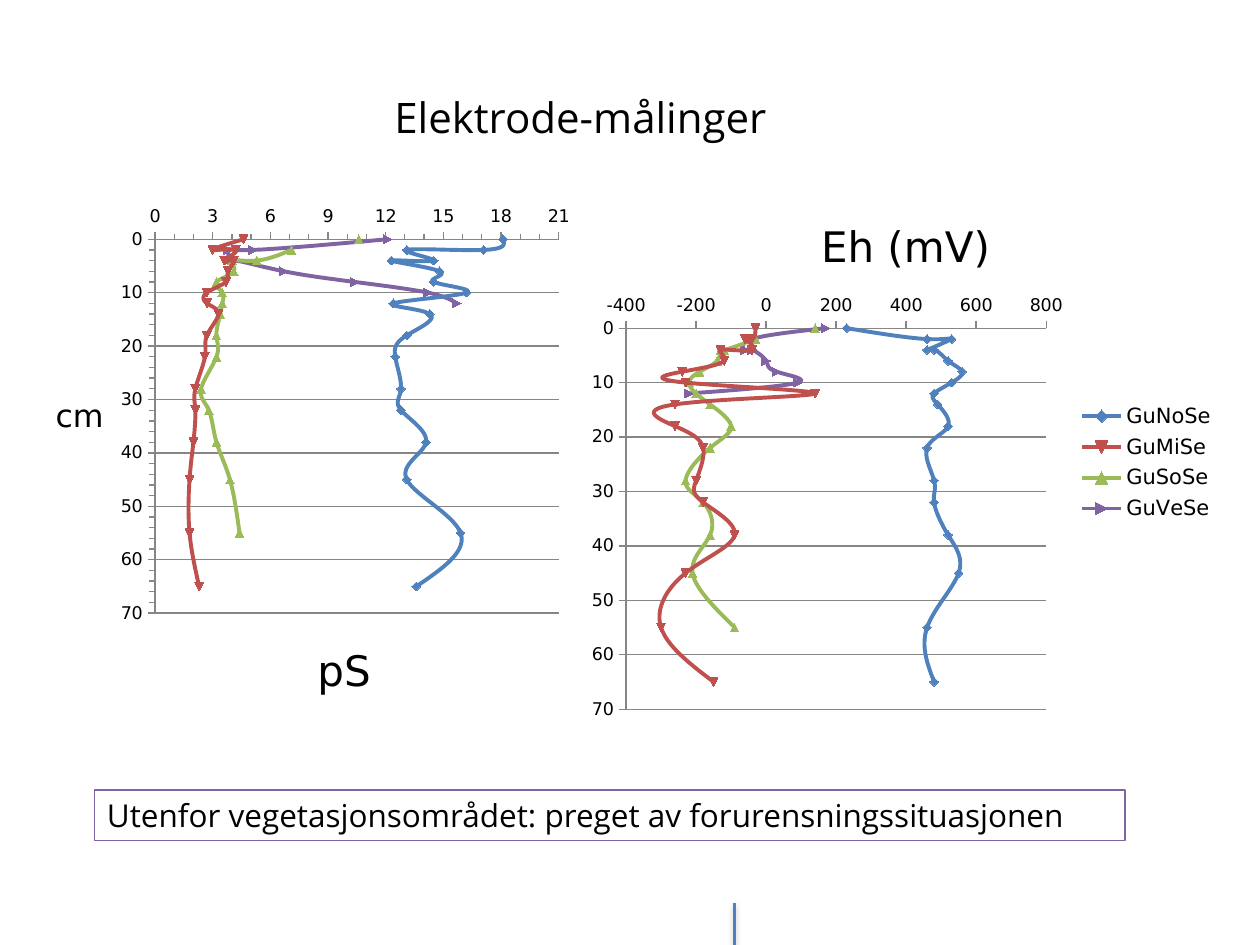
from lxml import etree
from pptx import Presentation
from pptx.chart.data import XyChartData
from pptx.dml.color import RGBColor
from pptx.enum.chart import (XL_AXIS_CROSSES, XL_CHART_TYPE, XL_LEGEND_POSITION,
                             XL_TICK_LABEL_POSITION, XL_TICK_MARK)
from pptx.enum.shapes import MSO_CONNECTOR, MSO_SHAPE
from pptx.enum.text import MSO_ANCHOR, PP_ALIGN
from pptx.oxml import parse_xml
from pptx.oxml.ns import nsdecls, qn
from pptx.util import Inches, Pt

SCATTER = XL_CHART_TYPE.XY_SCATTER_SMOOTH
MINIMUM = XL_AXIS_CROSSES.MINIMUM
LEGEND_RIGHT = XL_LEGEND_POSITION.RIGHT
NEXT_TO_AXIS = XL_TICK_LABEL_POSITION.NEXT_TO_AXIS
TICK_OUT, TICK_NONE = XL_TICK_MARK.OUTSIDE, XL_TICK_MARK.NONE
STRAIGHT, RECTANGLE = MSO_CONNECTOR.STRAIGHT, MSO_SHAPE.RECTANGLE
LEFT, MIDDLE = PP_ALIGN.LEFT, MSO_ANCHOR.MIDDLE

TEXT_FONT, CHART_FONT = "Open Sans", "DejaVu Sans"
COLORS = {
    "text": "000000",
    "axis": "868686",
    "blue": "4F81BD",
    "red": "C0504D",
    "green": "9BBB59",
    "purple": "8064A2",
}
SERIES_COLORS = ["blue", "red", "green", "purple"]

# Sampling depths in cm, shared by all cores; None marks a missing reading
DEPTHS = [0, 2, 2, 4, 4, 6, 8, 10, 12, 14, 18, 22, 28, 32, 38, 45, 55, 65]
SULPHIDE = {
    "Series 1": [18.1, 17.1, 13.1, 14.5, 12.3, 14.8, 14.5, 16.2, 12.4, 14.3,
                 13.1, 12.5, 12.8, 12.8, 14.1, 13.1, 15.9, 13.6],
    "Series 2": [4.6, 3, 4.2, 3.6, 4.1, 3.8, 3.7, 2.7, 2.7, 3.3,
                 2.7, 2.6, 2.1, 2.1, 2, 1.8, 1.8, 2.3],
    "Series 3": [10.6, None, 7.1, 5.3, 4, 4.1, 3.2, 3.5, 3.5, 3.4,
                 3.2, 3.2, 2.4, 2.8, 3.2, 3.9, 4.4, None],
    "Series 4": [12.1, 5.1, 3.8, 3.8, 4.2, 6.7, 10.4, 14.2, 15.7] + [None] * 9,
}
REDOX = {
    "GuNoSe": [230, 460, 530, 460, 480, 520, 560, 530, 480, 490,
               520, 460, 480, 480, 520, 550, 460, 480],
    "GuMiSe": [-30, -40, -60, -40, -130, -120, -240, -230, 140, -260,
               -260, -180, -200, -180, -90, -230, -300, -150],
    "GuSoSe": [140, None, -30, -120, -130, -140, -190, -220, -200, -160,
               -100, -160, -230, -180, -160, -210, -90, None],
    "GuVeSe": [170, -40, -40, -60, -40, 0, 30, 90, -220] + [None] * 9,
}


def rgb(name):
    return RGBColor.from_string(COLORS[name])


def style_font(font, size, name):
    font.size = Pt(size)
    font.name = name
    font.bold = False
    font.color.rgb = rgb("text")


def write_text(shape, text, size):
    frame = shape.text_frame
    frame.text = text
    frame.word_wrap = True
    frame.vertical_anchor = MIDDLE
    paragraph = frame.paragraphs[0]
    paragraph.alignment = LEFT
    style_font(paragraph.runs[0].font, size, TEXT_FONT)


def place(element, x, y, width=None, height=None, inner=False):
    """Give a chart part a manual layout, in fractions of the chart."""
    for old in element.findall(qn("c:layout")):
        element.remove(old)
    layout = etree.Element(qn("c:layout"))
    manual = etree.SubElement(layout, qn("c:manualLayout"))
    values = {"xMode": "edge", "yMode": "edge", "x": x, "y": y, "w": width, "h": height}
    if inner:
        values = {"layoutTarget": "inner", **values}
    for tag, value in values.items():
        if value is not None:
            etree.SubElement(manual, qn(f"c:{tag}")).set("val", str(value))
    before = [child for child in element
              if child.tag in (qn("c:tx"), qn("c:legendPos"))]
    element.insert(len(before), layout)


def add_title(owner, text, size, x, y):
    """Title a chart or an axis with horizontal text."""
    title = owner.axis_title if hasattr(owner, "axis_title") else owner.chart_title
    frame = title.text_frame
    frame.text = text
    style_font(frame.paragraphs[0].runs[0].font, size, CHART_FONT)
    body = title._element.find(".//" + qn("a:bodyPr"))
    body.set("rot", "0")
    body.set("vert", "horz")
    place(title._element, x, y)


def style_axis(axis, low, high, major, minor=None):
    axis.minimum_scale, axis.maximum_scale = low, high
    axis.major_unit = major
    axis.major_tick_mark = TICK_OUT
    axis.minor_tick_mark = TICK_OUT if minor else TICK_NONE
    if minor:
        unit = axis._element.find(qn("c:majorUnit"))
        unit.addnext(parse_xml(f'<c:minorUnit {nsdecls("c")} val="{minor}"/>'))
    axis.tick_label_position = NEXT_TO_AXIS
    axis.tick_labels.number_format = "0"
    axis.tick_labels.number_format_is_linked = False
    axis.crosses = MINIMUM
    axis.format.line.color.rgb = rgb("axis")
    axis.format.line.width = Pt(0.75)


def style_series(series, color):
    series.format.line.color.rgb = rgb(color)
    series.format.line.width = Pt(2.25)
    series._element.find(qn("c:smooth")).set("val", "1")
    # Missing readings stay as gaps
    for point in list(series._element.iter(qn("c:pt"))):
        if point.find(qn("c:v")).text == "None":
            point.getparent().remove(point)


def add_depth_chart(slide, box, readings, plot_box, x_scale, depth_minor=None):
    """Plot readings across and depth downwards."""
    data = XyChartData()
    for name, values in readings.items():
        series = data.add_series(name)
        for value, depth in zip(values, DEPTHS):
            series.add_data_point(value, depth)
    chart = slide.shapes.add_chart(SCATTER, *map(Inches, box), data).chart
    style_font(chart.font, 10, CHART_FONT)
    chart.has_title = False
    chart.has_legend = False

    plot = chart.plots[0]
    plot.vary_by_categories = False
    for series, color in zip(plot.series, SERIES_COLORS):
        style_series(series, color)

    style_axis(chart.category_axis, *x_scale)
    chart.category_axis.has_major_gridlines = False
    depth_axis = chart.value_axis
    style_axis(depth_axis, 0, 70, 10, depth_minor)
    depth_axis.reverse_order = True
    depth_axis.has_major_gridlines = True
    depth_axis.major_gridlines.format.line.color.rgb = rgb("axis")
    depth_axis.major_gridlines.format.line.width = Pt(0.75)
    place(chart._chartSpace.find(".//" + qn("c:plotArea")), *plot_box, inner=True)
    return chart


def add_bottom_tick(slide):
    line = slide.shapes.add_connector(
        STRAIGHT, Inches(5.83), Inches(7.17), Inches(5.83), Inches(7.5))
    line.line.color.rgb = rgb("blue")
    line.line.width = Pt(2)
    line._element.spPr.append(parse_xml(
        f'<a:effectLst {nsdecls("a")}><a:outerShdw blurRad="39370" dist="20320" '
        'dir="5400000" rotWithShape="0"><a:srgbClr val="808080">'
        '<a:alpha val="38000"/></a:srgbClr></a:outerShdw></a:effectLst>'))


def add_framed_note(slide, box, text):
    note = slide.shapes.add_shape(RECTANGLE, *map(Inches, box))
    note.shadow.inherit = False
    note.fill.background()
    note.line.color.rgb = rgb("purple")
    note.line.width = Pt(0.75)
    write_text(note, text, 18)


def main():
    presentation = Presentation()
    presentation.slide_width, presentation.slide_height = Inches(10), Inches(7.5)
    slide = presentation.slides.add_slide(presentation.slide_layouts[5])
    add_bottom_tick(slide)
    # Sulphide profile
    sulphide = add_depth_chart(slide, (0.22, 1.56, 4.39, 4.24), SULPHIDE,
                               (0.23, 0.08, 0.73, 0.7), (0, 21, 3, 1), 2)
    add_title(sulphide.category_axis, "pS", 24, 0.51, 0.82)
    add_title(sulphide.value_axis, "cm", 18, 0.04, 0.36)
    # Redox profile, with the legend for both charts
    redox = add_depth_chart(slide, (4.61, 1.54, 5.13, 4.26), REDOX,
                            (0.07, 0.25, 0.65, 0.71), (-400, 800, 200))
    add_title(redox, "Eh (mV)", 24, 0.36, 0.03)
    redox.has_legend = True
    redox.legend.position = LEGEND_RIGHT
    redox.legend.include_in_layout = False
    style_font(redox.legend.font, 12, CHART_FONT)
    place(redox.legend._element, 0.76, 0.38, 0.23, 0.24)
    # Heading and conclusion
    title = slide.shapes.title
    title.left, title.top, title.width, title.height = map(Inches, (3.03, 0.68, 3.37, 0.5))
    write_text(title, "Elektrode-målinger", 24)
    add_framed_note(slide, (0.75, 6.27, 8.18, 0.4),
                    "Utenfor vegetasjonsområdet: preget av forurensningssituasjonen")
    presentation.save("out.pptx")


if __name__ == "__main__":
    main()
